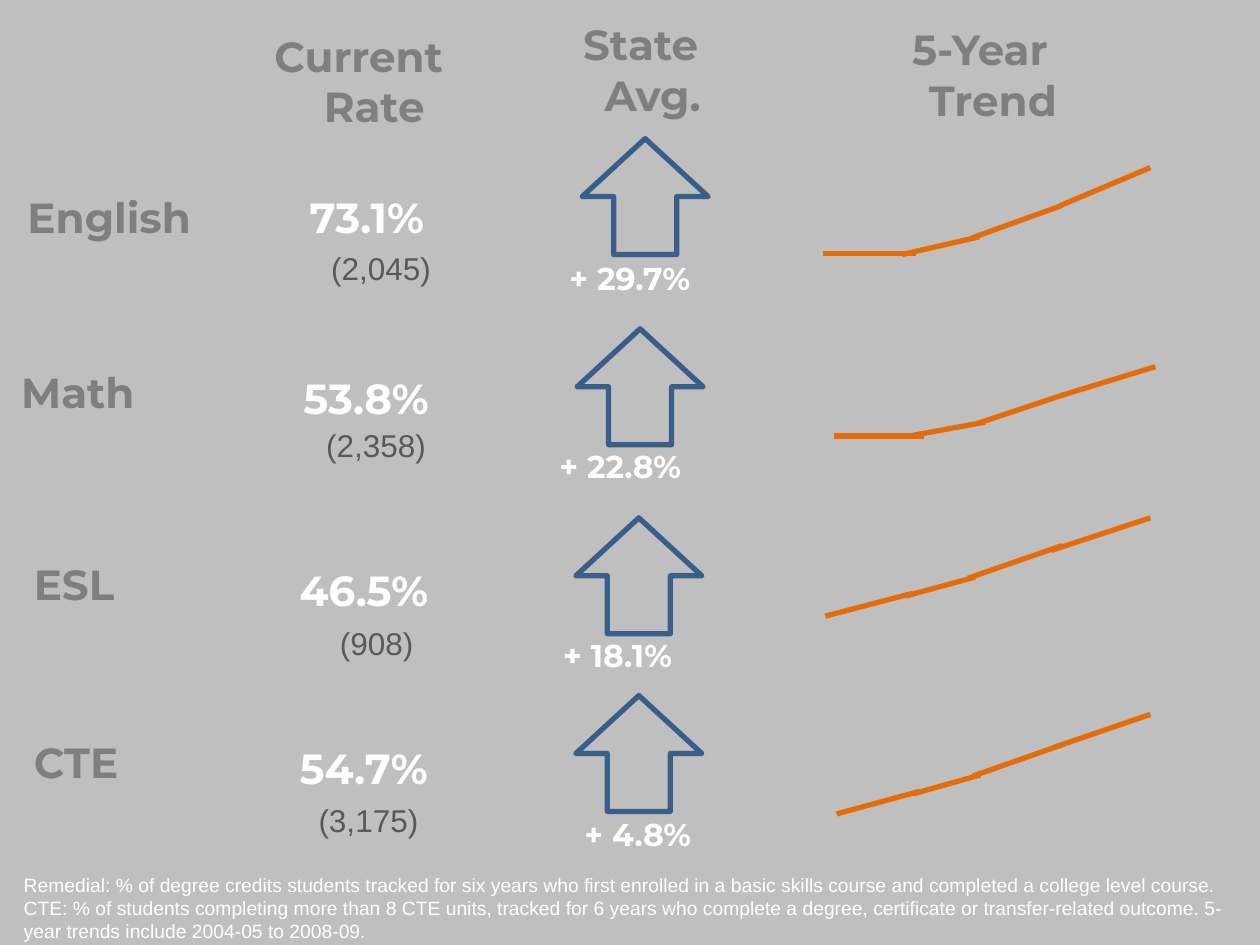
from pptx import Presentation
from pptx.dml.color import RGBColor
from pptx.enum.shapes import MSO_CONNECTOR, MSO_SHAPE
from pptx.enum.text import PP_ALIGN
from pptx.oxml.ns import qn
from pptx.util import Inches, Pt
from lxml.etree import SubElement

THEME = {
    "background": "BFBFBF", "arrow": "395E8A", "trend": "E46C0A", "stroke": 3,
    # text style: font, size, bold, colour
    "heading": ("Montserrat", 24, True, "7F7F7F"),
    "rate": ("Montserrat", 24, True, "FFFFFF"),
    "gap": ("Montserrat", 18, True, "FFFFFF"),
    "count": ("Arial", 18, False, "595959"),
    "note": ("Arial", 11, False, "FFFFFF"),
}

# Column headings: two lines, then left, top, width, height
HEADINGS = [
    (("Current", "Rate"), (2.08, 0.19, 1.78, 0.91)),
    (("State", "Avg."), (4.53, 0.1, 1.3, 0.91)),
    (("5-Year", "Trend"), (7.14, 0.14, 1.48, 0.91)),
]

# Each text carries its left and top; trend segments are x1, y1, x2, y2
SUBJECTS = [
    {"subject": ("English", 0.12, 1.47), "rate": ("73.1%", 2.36, 1.47),
     "count": ("(2,045)", 2.53, 1.93), "gap": ("+ 29.7%", 4.42, 2.01),
     "arrow": (4.62, 1.1),
     "trend": [(6.53, 2.01, 7.27, 2.01), (7.16, 2.02, 7.77, 1.88),
               (7.71, 1.89, 8.43, 1.63), (8.42, 1.63, 9.13, 1.33)]},
    {"subject": ("Math", 0.07, 2.86), "rate": ("53.8%", 2.31, 2.91),
     "count": ("(2,358)", 2.49, 3.33), "gap": ("+ 22.8%", 4.34, 3.5),
     "arrow": (4.58, 2.61),
     "trend": [(6.62, 3.46, 7.33, 3.46), (7.22, 3.46, 7.82, 3.35),
               (7.76, 3.36, 8.45, 3.13), (8.42, 3.14, 9.17, 2.91)]},
    {"subject": ("ESL", 0.17, 4.38), "rate": ("46.5%", 2.28, 4.43),
     "count": ("(908)", 2.6, 4.9), "gap": ("+ 18.1%", 4.37, 5),
     "arrow": (4.57, 4.11),
     "trend": [(6.55, 4.89, 7.24, 4.71), (7.19, 4.73, 7.74, 4.58),
               (7.68, 4.59, 8.43, 4.33), (8.34, 4.37, 9.13, 4.11)]},
    {"subject": ("CTE", 0.17, 5.8), "rate": ("54.7%", 2.28, 5.84),
     "count": ("(3,175)", 2.43, 6.31), "gap": ("+ 4.8%", 4.54, 6.42),
     "arrow": (4.57, 5.52),
     "trend": [(6.64, 6.46, 7.3, 6.28), (7.25, 6.3, 7.78, 6.15),
               (7.72, 6.16, 8.46, 5.9), (8.37, 5.93, 9.13, 5.67)]},
]

NOTES = [
    "Remedial: % of degree credits students tracked for six years who first enrolled "
    "in a basic skills course and completed a college level course.",
    "CTE: % of students completing more than 8 CTE units, tracked for 6 years who "
    "complete a degree, certificate or transfer-related outcome. "
    "5-year trends include 2004-05 to 2008-09.",
]

SUBJECT_SIZE = (2.36, 0.5)
FIGURE_SIZES = {"rate": (1.48, 0.5), "count": (1, 0.4), "gap": (1.48, 0.4)}
ARROW_SIZE = (1, 0.92)


def add_text(shapes, lines, box, style, last_align=None):
    frame = shapes.add_textbox(*map(Inches, box)).text_frame
    frame.word_wrap = True
    font_name, size, bold, color = THEME[style]
    for index, line in enumerate(lines):
        paragraph = frame.add_paragraph() if index else frame.paragraphs[0]
        run = paragraph.add_run()
        run.text = line
        run.font.name, run.font.size, run.font.bold = font_name, Pt(size), bold
        run.font.color.rgb = RGBColor.from_string(color)
    if last_align is not None:
        frame.paragraphs[-1].alignment = last_align


def set_stroke(shape, part):
    shape.line.color.rgb = RGBColor.from_string(THEME[part])
    shape.line.width = Pt(THEME["stroke"])


def add_up_arrow(shapes, position):
    arrow = shapes.add_shape(MSO_SHAPE.DOWN_ARROW, *map(Inches, position + ARROW_SIZE))
    arrow.rotation = 180
    arrow.shadow.inherit = False
    arrow.fill.background()
    set_stroke(arrow, "arrow")


def add_segment(shapes, ends):
    segment = shapes.add_connector(MSO_CONNECTOR.STRAIGHT, *map(Inches, ends))
    set_stroke(segment, "trend")
    SubElement(segment._element.spPr, qn("a:effectLst"))


def main():
    presentation = Presentation()
    presentation.slide_width, presentation.slide_height = Inches(10), Inches(7.5)
    slide = presentation.slides.add_slide(presentation.slide_layouts[6])
    slide.background.fill.solid()
    slide.background.fill.fore_color.rgb = RGBColor.from_string(THEME["background"])

    # Column headings
    heading_group = slide.shapes.add_group_shape()
    for lines, box in HEADINGS:
        add_text(heading_group.shapes, lines, box, "heading", PP_ALIGN.CENTER)

    # One row per subject: label, then grouped figures, arrow and trend
    for row in SUBJECTS:
        label, *position = row["subject"]
        add_text(slide.shapes, [label], (*position, *SUBJECT_SIZE), "heading")
        figures = slide.shapes.add_group_shape().shapes
        for part, size in FIGURE_SIZES.items():
            value, *position = row[part]
            add_text(figures, [value], (*position, *size), part)
        add_up_arrow(figures, row["arrow"])
        for ends in row["trend"]:
            add_segment(figures, ends)

    # Footnote
    add_text(slide.shapes, NOTES, (0.09, 6.88, 9.8, 0.62), "note")
    presentation.save("out.pptx")


if __name__ == "__main__":
    main()
